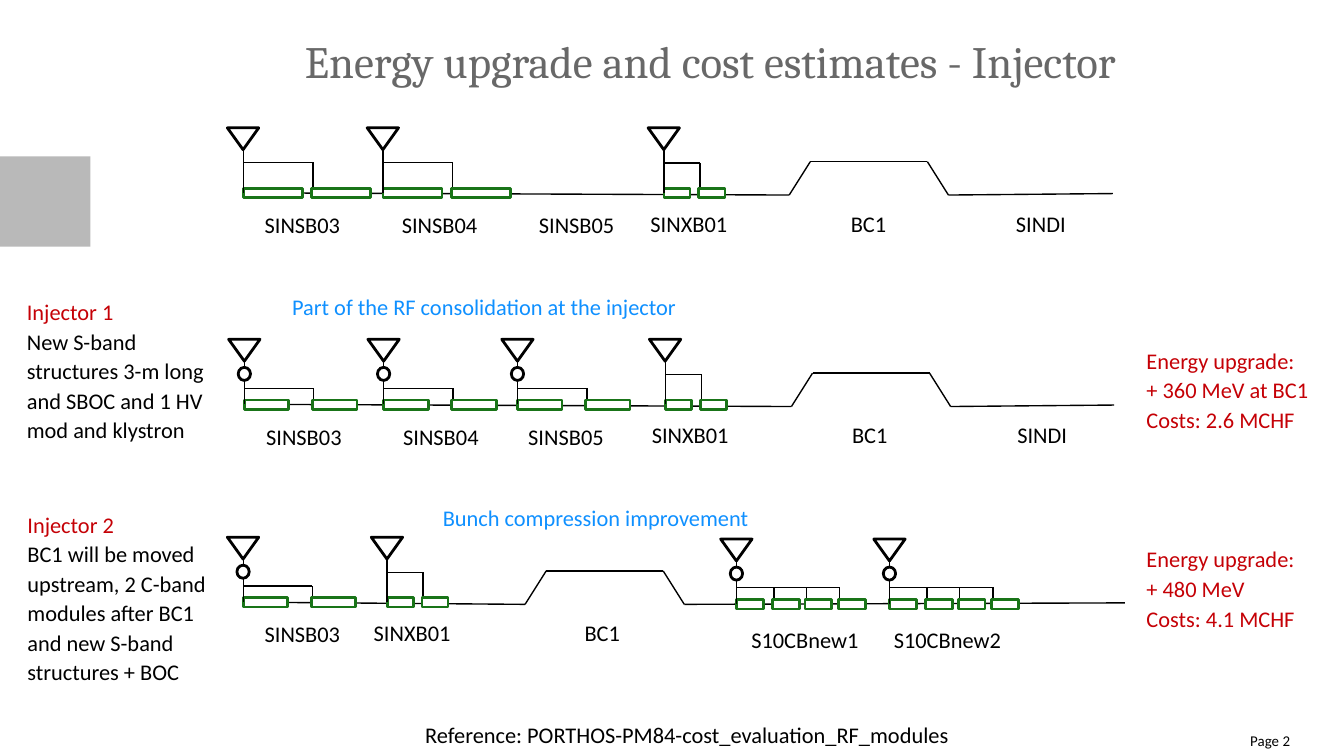
"""Injector energy upgrade: three beamline layouts with costs."""
from dataclasses import dataclass

from lxml.etree import SubElement
from pptx import Presentation
from pptx.dml.color import RGBColor as Rgb
from pptx.enum.shapes import MSO_CONNECTOR as Wire, MSO_SHAPE as Preset
from pptx.enum.text import MSO_ANCHOR as Anchor, PP_ALIGN as Align
from pptx.oxml.ns import qn
from pptx.util import Pt


@dataclass(frozen=True)
class Theme:
    ink: str = "000000"
    paper: str = "FFFFFF"
    structure: str = "197418"
    accent: str = "C50006"
    note: str = "0F90FF"
    title: str = "686868"
    block: str = "B9B9B9"
    body_font: str = "Calibri"
    title_font: str = "Cambria"
    title_size: float = 24
    body_size: float = 12
    page_size: float = 8
    thin: float = 0.75
    bold: float = 1.5
    leading: float = 1.1


THEME = Theme()

# fmt: off
STATIONS = {
    "S-band": {"bus": 17, "offsets": (0, 36.7), "width": 31.7, "ring": False, "sag": 0},
    "S-band new": {"bus": 9.3, "offsets": (0, 36.5), "width": 23.8, "ring": True, "sag": 0},
    "X-band": {"bus": 16.7, "offsets": (0, 18.7), "width": 14, "ring": False, "sag": 0},
    "C-band": {"bus": 9.6, "offsets": (0, 19.4, 36.7, 54.7), "width": 14.4, "ring": True, "sag": 1},
}
LABEL_DROP = {"S": 7.8, "X": 7.1, "C": 10.8}
LABEL_WIDTH = {"S": 52, "X": 52, "C": 62}

BEAMLINES = [
    {"beam": 104, "chicane": 422.8, "end": 596.2,
     "stations": [("S-band", 130.3), ("S-band", 205.2), ("X-band", 355.7)],
     "labels": [("SINSB03", 141.8, "S"), ("SINSB04", 215.3, "S"), ("SINSB05", 288.7, "S"),
                ("SINXB01", 348.5, "X"), ("BC1", 455.8, "X"), ("SINDI", 544.3, "X")]},
    {"beam": 217.3, "chicane": 424, "end": 596.9,
     "stations": [("S-band new", 131), ("S-band new", 205.6), ("S-band new", 277.3),
                  ("X-band", 356.4)],
     "labels": [("SINSB03", 142.6, "S"), ("SINSB04", 216, "S"), ("SINSB05", 283, "S"),
                ("SINXB01", 349.2, "X"), ("BC1", 456.5, "X"), ("SINDI", 545, "X")]},
    {"beam": 323.3, "chicane": 281.3, "end": 602.6,
     "stations": [("S-band new", 130.3), ("X-band", 207.4), ("C-band", 394.6),
                  ("C-band", 476.6)],
     "labels": [("SINSB03", 141.8, "S"), ("SINXB01", 200.2, "X"), ("BC1", 313.2, "X"),
                ("S10CBnew1", 402.5, "C"), ("S10CBnew2", 478.8, "C")]},
]

NOTES = [
    ((14.4, 158.4, 103, 80.6), [
        ("Injector 1", THEME.accent),
        ("New S-band structures 3-m long and SBOC and 1 HV mod and klystron", THEME.ink)]),
    ((614.2, 184.3, 103, 55.4), [
        ("Energy upgrade:", THEME.accent), ("+ 360 MeV at BC1", THEME.accent),
        ("Costs: 2.6 MCHF", THEME.accent)]),
    ((14.7, 272.2, 103, 99.4), [
        ("Injector 2", THEME.accent),
        ("BC1 will be moved upstream, 2 C-band modules after BC1 and new S-band "
         "structures + BOC", THEME.ink)]),
    ((614.2, 290.9, 103, 55.4), [
        ("Energy upgrade:", THEME.accent), ("+ 480 MeV", THEME.accent),
        ("Costs: 4.1 MCHF", THEME.accent)]),
    ((156.5, 155.5, 220, 18.7), [("Part of the RF consolidation at the injector", THEME.note)]),
    ((237.2, 268.6, 209, 18.7), [("Bunch compression improvement", THEME.note)]),
    ((227.8, 385.2, 300, 17.3), [
        ("Reference: PORTHOS-PM84-cost_evaluation_RF_modules", THEME.ink)]),
]
# fmt: on


def add_text(slide, box, lines, size=THEME.body_size, font=THEME.body_font,
             align=Align.LEFT, anchor=Anchor.TOP, leading=THEME.leading):
    frame = slide.shapes.add_textbox(*map(Pt, box)).text_frame
    frame.word_wrap = True
    frame.vertical_anchor = anchor
    frame.margin_left = frame.margin_right = frame.margin_top = frame.margin_bottom = 0
    for index, (words, color) in enumerate(lines):
        paragraph = frame.add_paragraph() if index else frame.paragraphs[0]
        paragraph.alignment = align
        paragraph.line_spacing = leading
        run = paragraph.add_run()
        run.text = words
        run.font.size = Pt(size)
        run.font.name = font
        run.font.color.rgb = Rgb.from_string(color)


def add_outline(slide, preset, box, line=THEME.ink, fill=THEME.paper):
    outline = slide.shapes.add_shape(preset, *map(Pt, box))
    outline.shadow.inherit = False
    outline.fill.solid()
    outline.fill.fore_color.rgb = Rgb.from_string(fill)
    if line:
        outline.line.color.rgb = Rgb.from_string(line)
        outline.line.width = Pt(THEME.bold)
    else:
        outline.line.fill.background()
    return outline


def add_path(slide, *points):
    for start, end in zip(points, points[1:]):
        wire = slide.shapes.add_connector(Wire.STRAIGHT, *map(Pt, start + end))
        wire.line.color.rgb = Rgb.from_string(THEME.ink)
        wire.line.width = Pt(THEME.thin)
        SubElement(wire._element.spPr, qn("a:effectLst"))


def add_station(slide, kind, x, beam):
    station = STATIONS[kind]
    beam += station["sag"]
    bus = beam - station["bus"]
    first, *others = [
        (x + offset, beam - 3, station["width"], 5) for offset in station["offsets"]
    ]
    klystron = add_outline(slide, Preset.ISOSCELES_TRIANGLE, (x - 8.5, beam - 35.5, 16.8, 11.7))
    klystron.rotation = 180
    add_outline(slide, Preset.RECTANGLE, first, THEME.structure)
    add_path(slide, (x, beam - 23.8), (x, beam - 0.7))
    add_path(slide, (x, bus), (others[-1][0] + 0.6, bus))
    for structure in others:
        tap = structure[0] + 0.6
        add_path(slide, (tap, bus), (tap, beam))
        add_outline(slide, Preset.RECTANGLE, structure, THEME.structure)
    if station["ring"]:
        add_outline(slide, Preset.OVAL, (x - 3.4, beam - 20.5, 6.6, 7))


def add_beamline(slide, beam, chicane, end, stations, labels):
    foot, top = beam + 0.5, beam - 17.4
    add_path(slide, (stations[0][1], beam - 0.7), (chicane, foot), (chicane + 11.3, top),
             (chicane + 74, top), (chicane + 85.3, foot), (end, beam - 0.3))
    for kind, x in stations:
        add_station(slide, kind, x, beam)
    for words, x, band in labels:
        box = (x, beam + LABEL_DROP[band], LABEL_WIDTH[band], 17.3)
        add_text(slide, box, [(words, THEME.ink)])


def main():
    deck = Presentation()
    deck.slide_width, deck.slide_height = Pt(720), Pt(405)
    slide = deck.slides.add_slide(deck.slide_layouts[6])
    add_outline(slide, Preset.RECTANGLE, (0, 83.8, 48.4, 48.4), None, THEME.block)
    add_text(slide, (163.4, 17.3, 528.5, 30.2),
             [("Energy upgrade and cost estimates - Injector", THEME.title)],
             THEME.title_size, THEME.title_font, anchor=Anchor.MIDDLE, leading=1)
    add_text(slide, (645.8, 391, 45.4, 11.5), [("Page 2", THEME.ink)],
             THEME.page_size, align=Align.RIGHT, anchor=Anchor.MIDDLE, leading=1)
    for beamline in BEAMLINES:
        add_beamline(slide, **beamline)
    for box, lines in NOTES:
        add_text(slide, box, lines)
    deck.save("out.pptx")


if __name__ == "__main__":
    main()
